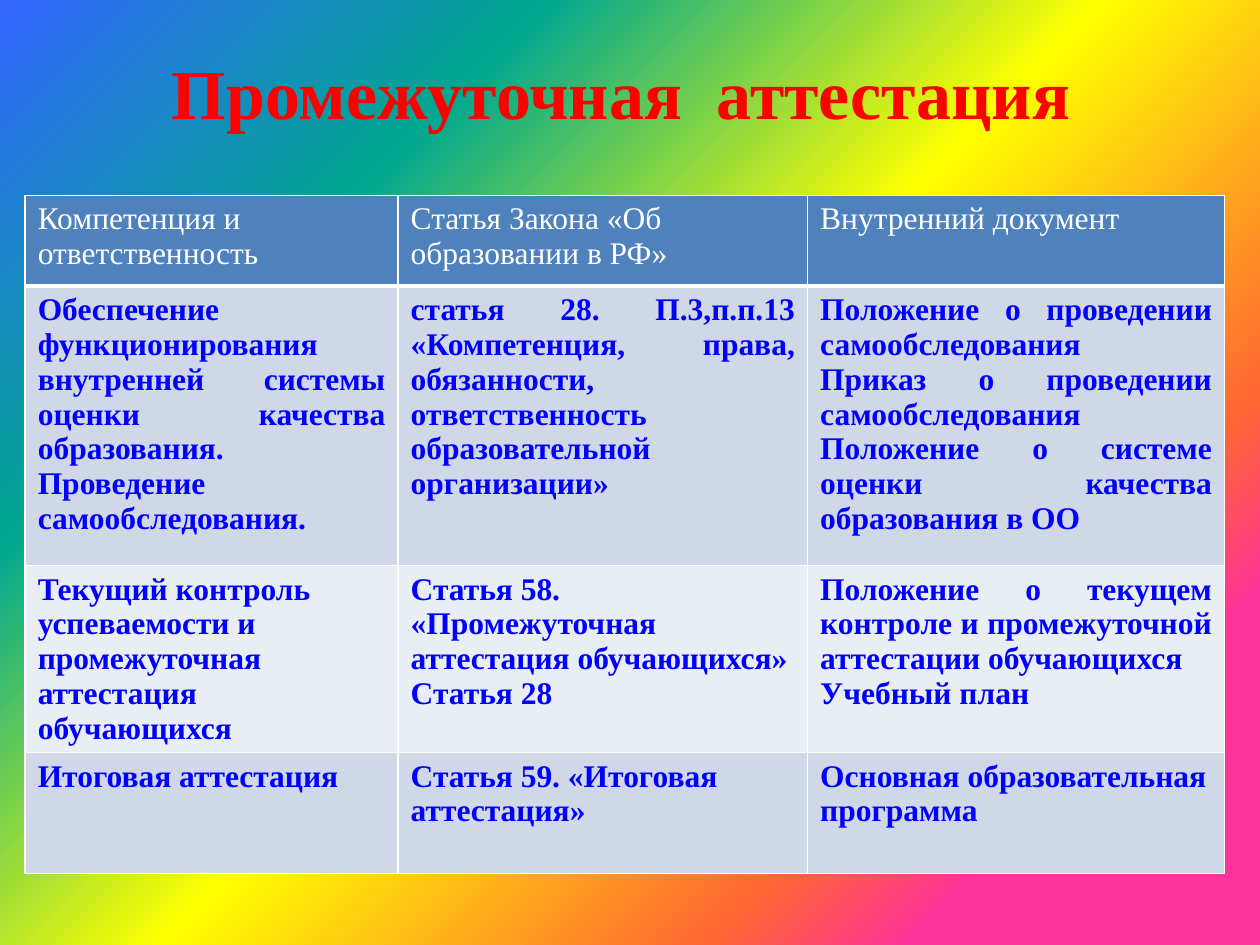
from pptx import Presentation
from pptx.dml.color import RGBColor
from pptx.enum.text import MSO_ANCHOR, PP_ALIGN
from pptx.oxml import parse_xml
from pptx.oxml.ns import nsdecls, qn
from pptx.util import Inches, Pt

LEFT, CENTER, JUST = PP_ALIGN.LEFT, PP_ALIGN.CENTER, PP_ALIGN.JUSTIFY
MIDDLE = MSO_ANCHOR.MIDDLE
FONT = "Times New Roman"
COLORS = {
    "title": "FF0000", "head": "4F81BD", "dark": "D0D8E8", "light": "E9EDF4",
    "white": "FFFFFF", "text": "0000FF",
}
STOPS = [(16, "FF3399"), (25, "FF6633"), (50, "FFFF00"), (75, "01A78F"), (100, "3366FF")]
TITLE = "Промежуточная  аттестация"
COLS = [2.96, 3.25, 3.31]
ROWS = [
    (0.72, "head", [
        (LEFT, ["Компетенция и ответственность"]),
        (LEFT, ["Статья Закона «Об образовании в РФ»"]),
        (LEFT, ["Внутренний документ"]),
    ]),
    (2.22, "dark", [
        (JUST, ["Обеспечение функционирования внутренней системы оценки качества "
                "образования. Проведение самообследования."]),
        (JUST, ["статья 28. П.3,п.п.13 «Компетенция, права, обязанности, "
                "ответственность образовательной организации»"]),
        (JUST, ["Положение о проведении самообследования",
                "Приказ о проведении самообследования",
                "Положение о системе оценки качества образования в ОО"]),
    ]),
    (1.48, "light", [
        (LEFT, ["Текущий контроль успеваемости и промежуточная аттестация обучающихся"]),
        (LEFT, ["Статья 58. «Промежуточная аттестация обучающихся»", "Статья 28"]),
        (JUST, ["Положение о текущем контроле и промежуточной аттестации обучающихся",
                "Учебный план"]),
    ]),
    (0.96, "dark", [
        (JUST, ["Итоговая аттестация"]),
        (LEFT, ["Статья 59. «Итоговая аттестация»"]),
        (LEFT, ["Основная образовательная программа"]),
    ]),
]


def write(frame, lines, align, size, color, bold):
    for i, line in enumerate(lines):
        para = frame.paragraphs[0] if i == 0 else frame.add_paragraph()
        para.alignment = align
        run = para.add_run()
        run.text = line
        font = run.font
        font.name, font.size, font.bold = FONT, Pt(size), bold
        font.color.rgb = RGBColor.from_string(COLORS[color])


def paint(slide):
    slide.background.fill.solid()
    stops = "".join(f'<a:gs pos="{pos * 1000}"><a:srgbClr val="{tint}"/></a:gs>'
                    for pos, tint in STOPS)
    grad = parse_xml(
        f'<a:gradFill {nsdecls("a")} rotWithShape="1"><a:gsLst>{stops}</a:gsLst>'
        '<a:path path="circle"><a:fillToRect l="100000" t="100000"/></a:path></a:gradFill>')
    props = slide.element.find(".//" + qn("p:bgPr"))
    props.replace(props[0], grad)


def edge(cell, head):
    props = cell._tc.get_or_add_tcPr()
    for i, side in enumerate("LRTB"):
        width = Pt(3 if head and side == "B" else 1)
        props.insert(i, parse_xml(
            f'<a:ln{side} {nsdecls("a")} w="{width}"><a:solidFill>'
            f'<a:srgbClr val="{COLORS["white"]}"/></a:solidFill></a:ln{side}>'))


def add_grid(slide):
    high = sum(row[0] for row in ROWS)
    table = slide.shapes.add_table(
        len(ROWS), len(COLS), Inches(0.2), Inches(1.55),
        Inches(sum(COLS)), Inches(high)).table
    table.first_row = table.horz_banding = False
    for col, width in zip(table.columns, COLS):
        col.width = Inches(width)
    for row, (height, fill, cells) in zip(table.rows, ROWS):
        row.height = Inches(height)
        head = fill == "head"
        for cell, (align, lines) in zip(row.cells, cells):
            cell.fill.solid()
            cell.fill.fore_color.rgb = RGBColor.from_string(COLORS[fill])
            edge(cell, head)
            write(cell.text_frame, lines, align, 18, "white" if head else "text", not head)


def main():
    deck = Presentation()
    deck.slide_width, deck.slide_height = Inches(10), Inches(7.5)
    slide = deck.slides.add_slide(deck.slide_layouts[5])
    paint(slide)
    title = slide.shapes.title
    title.left, title.top = Inches(0.43), Inches(0.21)
    title.width, title.height = Inches(9), Inches(1.04)
    title.text_frame.vertical_anchor = MIDDLE
    write(title.text_frame, [TITLE], CENTER, 40, "title", True)
    add_grid(slide)
    deck.save("out.pptx")


if __name__ == "__main__":
    main()
